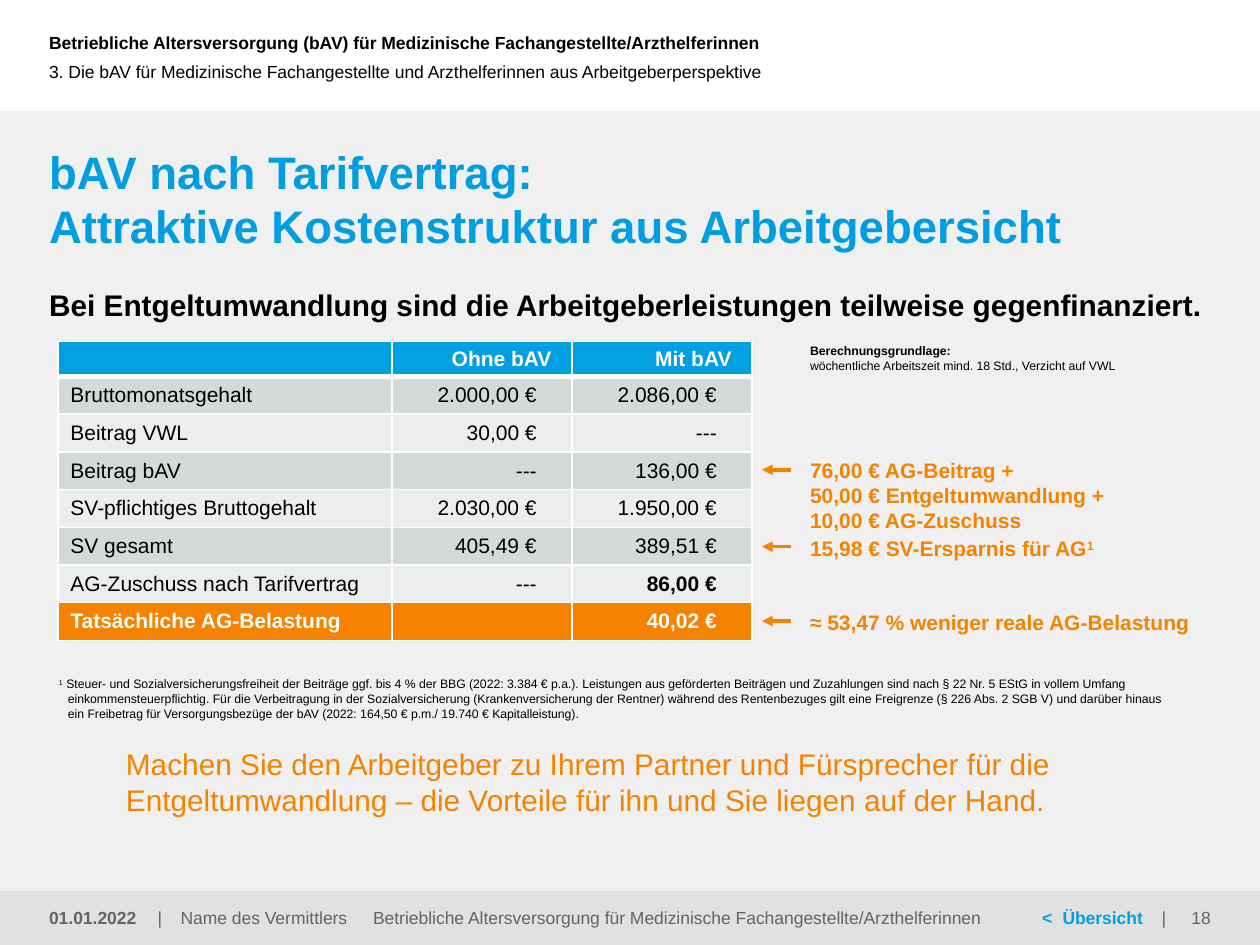
from dataclasses import dataclass

from lxml import etree
from pptx import Presentation
from pptx.dml.color import RGBColor
from pptx.enum.shapes import MSO_CONNECTOR, MSO_SHAPE
from pptx.enum.text import MSO_ANCHOR, MSO_AUTO_SIZE, PP_ALIGN
from pptx.oxml.ns import qn
from pptx.util import Cm, Pt

LEFT, CENTER, RIGHT = PP_ALIGN.LEFT, PP_ALIGN.CENTER, PP_ALIGN.RIGHT
TOP, MIDDLE = MSO_ANCHOR.TOP, MSO_ANCHOR.MIDDLE
RECTANGLE, STRAIGHT = MSO_SHAPE.RECTANGLE, MSO_CONNECTOR.STRAIGHT
NO_AUTO_SIZE = MSO_AUTO_SIZE.NONE

FONT = "Arial"
BLACK, WHITE, GREY = "000000", "FFFFFF", "646464"
BLUE, TITLE_BLUE, ORANGE = "00A0E1", "009EE0", "F58200"
DARK_ROW, LIGHT_ROW = "D4D9DA", "EBEDEE"

MARGIN = 0.99
FOOTER_TOP, FOOTER_HEIGHT = 17.96, 1.09
NOTE_LEFT = 16.33
COLUMN_WIDTHS = (6.73, 3.63, 3.63)
HEADER_ROW_HEIGHT, ROW_HEIGHT = 0.71, 0.76
TABLE_LEFT, TABLE_TOP = 1.17, 6.88
ARROW_START, ARROW_END = 15.95, 15.36
ARROW_TOPS = (9.47, 11.02, 12.52)


@dataclass(frozen=True)
class Span:
    text: str
    bold: bool | None = None
    color: str | None = None
    superscript: bool = False


@dataclass(frozen=True)
class Label:
    left: float
    top: float
    width: float
    height: float
    paragraphs: tuple[tuple[Span, ...], ...]
    size: float = 10
    color: str = BLACK
    bold: bool = False
    align: PP_ALIGN = LEFT
    anchor: MSO_ANCHOR = MIDDLE
    line_spacing: float | None = None
    tabs: tuple[float, ...] = ()
    hanging: float = 0


def line(text: str) -> tuple[tuple[Span, ...], ...]:
    return ((Span(text),),)


TITLE = Label(MARGIN, 2.9, 23.42, 1.4,
              line("bAV nach Tarifvertrag:\vAttraktive Kostenstruktur aus Arbeitgebersicht"),
              26, TITLE_BLUE, True, anchor=TOP, line_spacing=31)

LABELS = (
    Label(MARGIN, 0, 16.5, 1.7,
          line("Betriebliche Altersversorgung (bAV) für Medizinische Fachangestellte/Arzthelferinnen"),
          bold=True),
    Label(MARGIN, 0.64, 17.17, 1.6,
          line("3. Die bAV für Medizinische Fachangestellte und Arzthelferinnen aus Arbeitgeberperspektive")),
    Label(MARGIN, 5.79, 23.42, 0.74,
          line("Bei Entgeltumwandlung sind die Arbeitgeberleistungen teilweise gegenfinanziert."),
          17, bold=True, anchor=TOP),
    Label(NOTE_LEFT, 6.93, 7.24, 0.61,
          ((Span("Berechnungsgrundlage:", bold=True),),
           (Span("wöchentliche Arbeitszeit mind. 18 Std., Verzicht auf VWL"),)),
          7, anchor=TOP),
    Label(NOTE_LEFT, 9.22, 7.49, 1.55,
          line("76,00 € AG-Beitrag +\v50,00 € Entgeltumwandlung +\v10,00 € AG-Zuschuss"),
          12, ORANGE, True, anchor=TOP, line_spacing=14.4),
    Label(NOTE_LEFT, 10.8, 7.49, 0.51,
          ((Span("15,98 € SV-Ersparnis für AG"), Span("1", superscript=True)),),
          12, ORANGE, True, anchor=TOP, line_spacing=14.4),
    Label(NOTE_LEFT, 12.29, 8.08, 0.51, line("≈ 53,47 % weniger reale AG-Belastung"),
          12, ORANGE, True, anchor=TOP, line_spacing=14.4),
    Label(1.19, 13.64, 22.38, 1.07,
          ((Span("1", superscript=True),
            Span(" Steuer- und Sozialversicherungsfreiheit der Beiträge ggf. bis 4 % der BBG "
                 "(2022: 3.384 € p.a.). Leistungen aus geförderten Beiträgen und Zuzahlungen sind "
                 "nach § 22 Nr. 5 EStG in vollem Umfang einkommensteuerpflichtig. Für die "
                 "Verbeitragung in der Sozialversicherung (Krankenversicherung der Rentner) während "
                 "des Rentenbezuges gilt eine Freigrenze (§ 226 Abs. 2 SGB V) und darüber hinaus "
                 "ein Freibetrag für Versorgungsbezüge der bAV (2022: 164,50 € p.m./ 19.740 € "
                 "Kapitalleistung).")),),
          7, anchor=TOP, hanging=0.18),
    Label(2.54, 14.99, 21.87, 1.52,
          line("Machen Sie den Arbeitgeber zu Ihrem Partner und Fürsprecher für die "
               "Entgeltumwandlung – die Vorteile für ihn und Sie liegen auf der Hand."),
          17, ORANGE, line_spacing=20.5),
    Label(MARGIN, FOOTER_TOP, 1.9, FOOTER_HEIGHT, line("01.01.2022"), color=GREY, bold=True),
    Label(3.18, FOOTER_TOP, 6.15, FOOTER_HEIGHT, line("|\tName des Vermittlers"),
          color=GREY, tabs=(0.46,)),
    Label(7.04, FOOTER_TOP, 13.21, FOOTER_HEIGHT,
          line("Betriebliche Altersversorgung für Medizinische Fachangestellte/Arzthelferinnen"),
          color=GREY, align=CENTER),
    Label(21.01, FOOTER_TOP, 2.6, FOOTER_HEIGHT,
          ((Span("<\tÜbersicht", bold=True, color=BLUE), Span("\t|")),),
          color=GREY, tabs=(0.41, 2.41)),
    Label(23.27, FOOTER_TOP, 1.14, FOOTER_HEIGHT, line("18"), color=GREY, align=RIGHT),
)

TABLE_ROWS = (
    ("", "Ohne bAV", "Mit bAV"),
    ("Bruttomonatsgehalt", "2.000,00 €", "2.086,00 €"),
    ("Beitrag VWL", "30,00 €", "---"),
    ("Beitrag bAV", "---", "136,00 €"),
    ("SV-pflichtiges Bruttogehalt", "2.030,00 €", "1.950,00 €"),
    ("SV gesamt", "405,49 €", "389,51 €"),
    ("AG-Zuschuss nach Tarifvertrag", "---", "86,00 €"),
    ("Tatsächliche AG-Belastung", "", "40,02 €"),
)


def rgb(value: str) -> RGBColor:
    return RGBColor.from_string(value)


def format_font(font, size: float, color: str, bold: bool) -> None:
    font.name, font.size, font.bold = FONT, Pt(size), bold
    font.color.rgb = rgb(color)


def write_label(shape, label: Label) -> None:
    shape.left, shape.top = Cm(label.left), Cm(label.top)
    shape.width, shape.height = Cm(label.width), Cm(label.height)
    frame = shape.text_frame
    frame.word_wrap, frame.auto_size = True, NO_AUTO_SIZE
    frame.vertical_anchor = label.anchor
    frame.margin_left = frame.margin_right = frame.margin_top = frame.margin_bottom = 0
    for index, spans in enumerate(label.paragraphs):
        paragraph = frame.add_paragraph() if index else frame.paragraphs[0]
        paragraph.text = ""
        paragraph.alignment = label.align
        if label.line_spacing:
            paragraph.line_spacing = Pt(label.line_spacing)
        properties = paragraph._p.get_or_add_pPr()
        if label.hanging:
            properties.set("marL", str(Cm(label.hanging)))
            properties.set("indent", str(-Cm(label.hanging)))
        if label.tabs:
            tab_list = etree.SubElement(properties, qn("a:tabLst"))
            for position in label.tabs:
                etree.SubElement(tab_list, qn("a:tab"), pos=str(Cm(position)), algn="l")
        format_font(paragraph.font, label.size, label.color, label.bold)
        for span in spans:
            for part_index, part in enumerate(span.text.split("\v")):
                if part_index:
                    paragraph.add_line_break()
                run = paragraph.add_run()
                run.text = part
                format_font(run.font, label.size, span.color or label.color,
                            label.bold if span.bold is None else span.bold)
                if span.superscript:
                    run.font._element.set("baseline", "30000")


def add_band(slide, top: float, height: float, color: str) -> None:
    shape = slide.shapes.add_shape(RECTANGLE, 0, Cm(top), Cm(25.4), Cm(height))
    shape.shadow.inherit = False
    shape.fill.solid()
    shape.fill.fore_color.rgb = rgb(color)
    shape.line.fill.background()


def add_borders(cell, row: int) -> None:
    properties = cell._tc.get_or_add_tcPr()
    widths = {"lnL": 1, "lnR": 1, "lnT": 3 if row == 1 else 1, "lnB": 3 if row == 0 else 1}
    for tag, width in widths.items():
        border = etree.SubElement(properties, qn(f"a:{tag}"), w=str(Pt(width)))
        fill = etree.SubElement(border, qn("a:solidFill"))
        etree.SubElement(fill, qn("a:srgbClr"), val=WHITE)


def add_cost_table(slide) -> None:
    last = len(TABLE_ROWS) - 1
    height = HEADER_ROW_HEIGHT + last * ROW_HEIGHT
    table = slide.shapes.add_table(len(TABLE_ROWS), len(COLUMN_WIDTHS), Cm(TABLE_LEFT),
                                   Cm(TABLE_TOP), Cm(sum(COLUMN_WIDTHS)), Cm(height)).table
    for column, width in zip(table.columns, COLUMN_WIDTHS):
        column.width = Cm(width)
    for row, texts in enumerate(TABLE_ROWS):
        table.rows[row].height = Cm(ROW_HEIGHT if row else HEADER_ROW_HEIGHT)
        highlighted = row in (0, last)
        fill = {0: BLUE, last: ORANGE}.get(row, DARK_ROW if row % 2 else LIGHT_ROW)
        for column, text in enumerate(texts):
            cell = table.cell(row, column)
            add_borders(cell, row)
            cell.fill.solid()
            cell.fill.fore_color.rgb = rgb(fill)
            cell.vertical_anchor = MIDDLE
            cell.margin_top = cell.margin_bottom = 0
            cell.margin_left = Cm(0.25)
            cell.margin_right = Cm(0.25 if column == 0 else 0.71 if row else 0.41)
            cell.text = text
            paragraph = cell.text_frame.paragraphs[0]
            paragraph.alignment = RIGHT if column else LEFT
            format_font(paragraph.font, 12, WHITE if highlighted else BLACK,
                        highlighted or (row, column) == (last - 1, 2))


def add_arrow(slide, top: float) -> None:
    arrow = slide.shapes.add_connector(STRAIGHT, Cm(ARROW_START), Cm(top), Cm(ARROW_END), Cm(top))
    arrow.line.color.rgb = rgb(ORANGE)
    arrow.line.width = Pt(2)
    etree.SubElement(arrow.line._get_or_add_ln(), qn("a:tailEnd"), type="triangle")
    etree.SubElement(arrow._element.spPr, qn("a:effectLst"))


def main() -> None:
    presentation = Presentation()
    presentation.slide_width, presentation.slide_height = Cm(25.4), Cm(19.05)
    slide = presentation.slides.add_slide(presentation.slide_layouts[5])
    add_band(slide, 2.24, 16.81, "F0F0F0")
    add_band(slide, FOOTER_TOP, FOOTER_HEIGHT, "E1E1E1")
    title = slide.shapes.title
    slide.shapes._spTree.append(title._element)
    write_label(title, TITLE)
    add_cost_table(slide)
    for label in LABELS:
        write_label(slide.shapes.add_textbox(0, 0, 0, 0), label)
    for top in ARROW_TOPS:
        add_arrow(slide, top)
    presentation.save("out.pptx")


if __name__ == "__main__":
    main()
